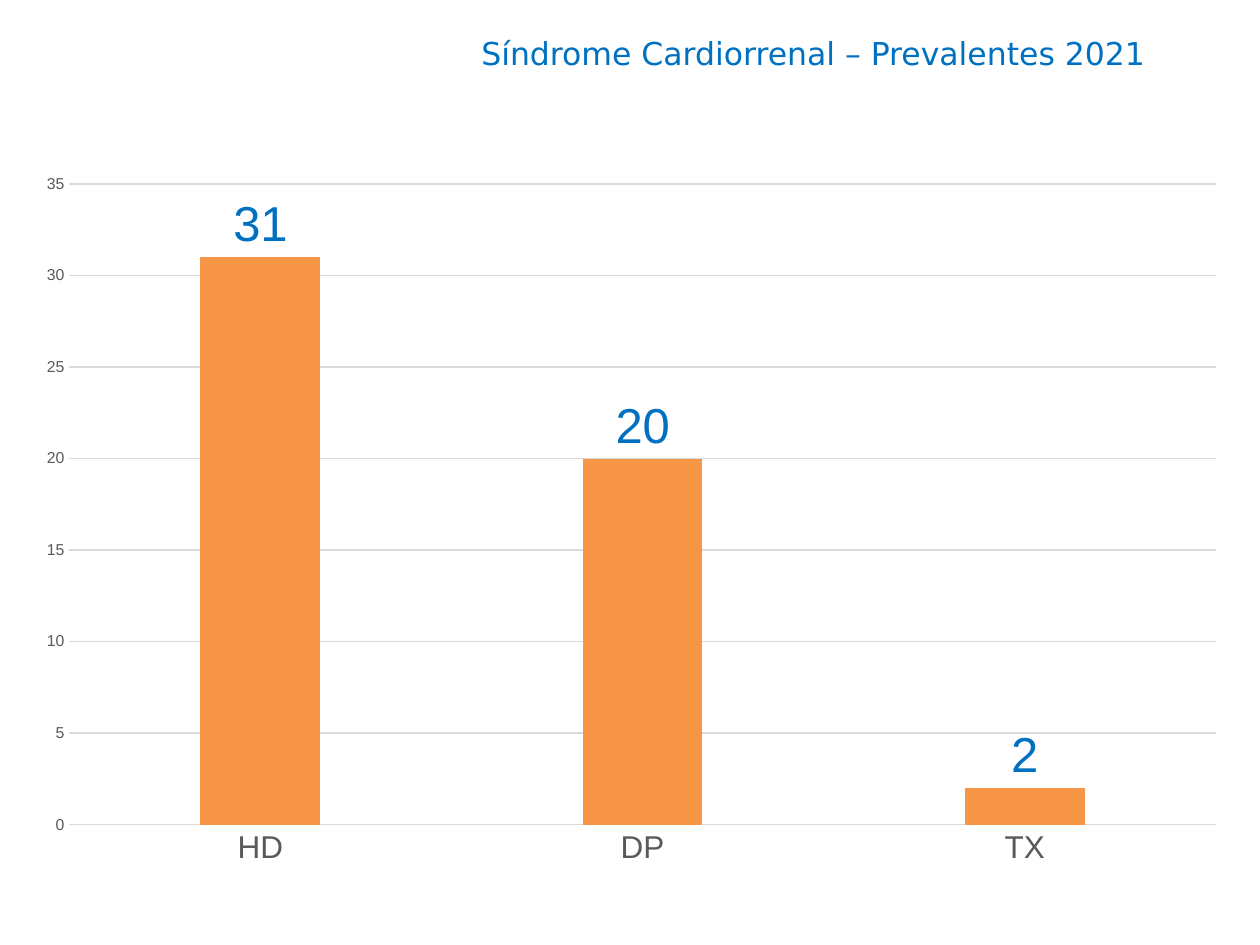
"""Build a slide with a column chart of cardiorenal syndrome prevalence by treatment."""
from lxml.etree import SubElement
from pptx import Presentation
from pptx.chart.data import CategoryChartData
from pptx.dml.color import RGBColor
from pptx.enum.chart import XL_CHART_TYPE as ChartType
from pptx.enum.chart import XL_LABEL_POSITION as LabelPosition
from pptx.enum.chart import XL_TICK_MARK as TickMark
from pptx.enum.text import MSO_ANCHOR as Anchor
from pptx.enum.text import PP_ALIGN as Align
from pptx.oxml.ns import qn
from pptx.util import Inches, Pt

TITLE = "Síndrome Cardiorrenal – Prevalentes 2021"
TREATMENTS = {"HD": 31, "DP": 20, "TX": 2}
COLORS = {"blue": "0070C0", "orange": "F79646", "gray": "595959",
          "rule": "D9D9D9", "black": "000000"}
SLIDE_SIZE = (1260, 945)
TITLE_BOX = (367, 28, 893, 50)
CHART_BOX = (0, 144, 1260, 801)
PLOT_AREA = {"x": 0.055, "y": 0.05, "w": 0.91, "h": 0.8}
NUMBER_FORMAT = "#,##0"


def px(length):
    return Inches(length / 126)


def color(name):
    return RGBColor.from_string(COLORS[name])


def style_font(font, size, color_name, face="Arial"):
    font.size = Pt(size)
    font.name = face
    font.bold = False
    font.color.rgb = color(color_name)


def style_rule(line):
    line.color.rgb = color("rule")
    line.width = Pt(0.75)


def add_title(slide):
    title = slide.shapes.title
    title.left, title.top, title.width, title.height = map(px, TITLE_BOX)
    frame = title.text_frame
    frame.word_wrap = True
    frame.vertical_anchor = Anchor.TOP
    paragraph = frame.paragraphs[0]
    paragraph.alignment = Align.CENTER
    run = paragraph.add_run()
    run.text = TITLE
    style_font(run.font, 18, "blue", "DejaVu Sans")


def place_plot_area(chart):
    plot_area = chart._chartSpace.chart.plotArea
    for old_layout in plot_area.findall(qn("c:layout")):
        plot_area.remove(old_layout)
    layout = SubElement(plot_area, qn("c:layout"))
    plot_area.insert(0, layout)
    manual = SubElement(layout, qn("c:manualLayout"))
    settings = {"layoutTarget": "inner", "xMode": "edge", "yMode": "edge", **PLOT_AREA}
    for tag, value in settings.items():
        SubElement(manual, qn(f"c:{tag}")).set("val", str(value))


def add_treatment_chart(slide):
    data = CategoryChartData(number_format=NUMBER_FORMAT)
    data.categories = list(TREATMENTS)
    data.add_series("Series 1", list(TREATMENTS.values()))
    chart = slide.shapes.add_chart(
        ChartType.COLUMN_CLUSTERED, *map(px, CHART_BOX), data).chart
    chart.has_legend = False
    chart.has_title = False
    style_font(chart.font, 10, "black")
    place_plot_area(chart)

    for axis, size in ((chart.category_axis, 18), (chart.value_axis, 9)):
        axis.major_tick_mark = axis.minor_tick_mark = TickMark.NONE
        style_font(axis.tick_labels.font, size, "gray")
    style_rule(chart.category_axis.format.line)
    value_axis = chart.value_axis
    value_axis.minimum_scale, value_axis.maximum_scale = 0, 35
    value_axis.major_unit = 5
    value_axis.format.line.fill.background()
    value_axis.tick_labels.number_format = NUMBER_FORMAT
    value_axis.tick_labels.number_format_is_linked = False
    style_rule(value_axis.major_gridlines.format.line)

    plot = chart.plots[0]
    plot.gap_width, plot.overlap = 219, -27
    plot.vary_by_categories = False
    series = plot.series[0]
    series.format.fill.solid()
    series.format.fill.fore_color.rgb = color("orange")
    labels = series.data_labels
    labels.show_value = True
    labels.position = LabelPosition.OUTSIDE_END
    labels.number_format = NUMBER_FORMAT
    labels.number_format_is_linked = False
    style_font(labels.font, 28, "blue")


def main():
    presentation = Presentation()
    presentation.slide_width, presentation.slide_height = map(px, SLIDE_SIZE)
    slide = presentation.slides.add_slide(presentation.slide_layouts[5])
    add_title(slide)
    add_treatment_chart(slide)
    presentation.save("out.pptx")


if __name__ == "__main__":
    main()
